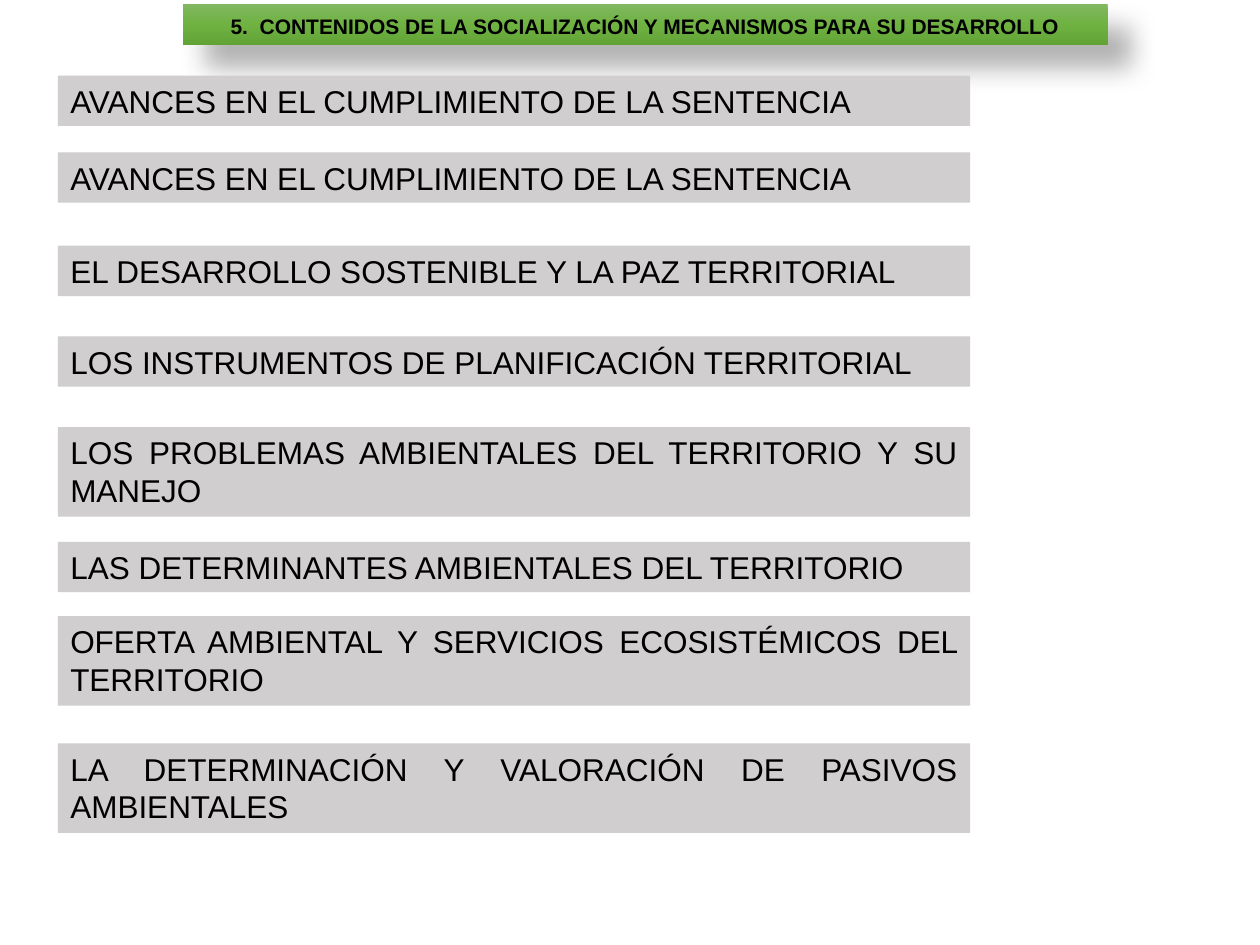
from copy import deepcopy

from lxml.etree import SubElement
from pptx import Presentation
from pptx.dml.color import RGBColor
from pptx.enum.text import MSO_ANCHOR, MSO_AUTO_SIZE as AutoSize, PP_ALIGN as Align
from pptx.oxml.ns import qn
from pptx.util import Inches, Pt

BLACK = RGBColor(0x00, 0x00, 0x00)
GREY = RGBColor(0xD0, 0xCE, 0xCE)
GREENS = [(0, RGBColor(0x81, 0xB8, 0x61)), (0.5, RGBColor(0x6F, 0xB2, 0x42)),
          (1, RGBColor(0x62, 0xA3, 0x36))]

TITLE = "5.  CONTENIDOS DE LA SOCIALIZACIÓN Y MECANISMOS PARA SU DESARROLLO"
LEFT, WIDTH = 0.46, 7.24
ONE_LINE, TWO_LINES = 0.4, 0.71
TOPICS = [
    (0.6, ONE_LINE, "AVANCES EN EL CUMPLIMIENTO DE LA SENTENCIA"),
    (1.21, ONE_LINE, "AVANCES EN EL CUMPLIMIENTO DE LA SENTENCIA"),
    (1.95, ONE_LINE, "EL DESARROLLO SOSTENIBLE Y LA PAZ TERRITORIAL"),
    (2.67, ONE_LINE, "LOS INSTRUMENTOS DE PLANIFICACIÓN TERRITORIAL"),
    (3.39, TWO_LINES, "LOS PROBLEMAS AMBIENTALES DEL TERRITORIO Y SU MANEJO"),
    (4.3, ONE_LINE, "LAS DETERMINANTES AMBIENTALES DEL TERRITORIO"),
    (4.89, TWO_LINES, "OFERTA AMBIENTAL Y SERVICIOS ECOSISTÉMICOS DEL TERRITORIO"),
    (5.9, TWO_LINES, "LA DETERMINACIÓN Y VALORACIÓN DE PASIVOS AMBIENTALES"),
]


def write(sp, text, size, align, auto_size, bold=False):
    tf = sp.text_frame
    tf.word_wrap = True
    tf.auto_size = auto_size
    tf.vertical_anchor = MSO_ANCHOR.TOP
    p = tf.paragraphs[0]
    p.text = text
    p.alignment = align
    p.font.name, p.font.size, p.font.bold = "Arial", Pt(size), bold
    p.font.color.rgb = BLACK
    return p


def fill_gradient(sp, stops):
    sp.fill.gradient()
    sp.fill.gradient_angle = 270
    stop_list = sp._element.spPr.find(qn("a:gradFill")).find(qn("a:gsLst"))
    stop_list.append(deepcopy(stop_list[-1]))
    for stop, (position, color) in zip(sp.fill.gradient_stops, stops):
        stop.position = position
        stop.color.rgb = color


def add_shadow(sp, blur, distance, angle, opacity):
    effects = SubElement(sp._element.spPr, qn("a:effectLst"))
    shadow = SubElement(effects, qn("a:outerShdw"), blurRad=str(Pt(blur)),
                        dist=str(Pt(distance)), dir=str(angle * 60000),
                        algn="tl", rotWithShape="0")
    color = SubElement(shadow, qn("a:srgbClr"), val=str(BLACK))
    SubElement(color, qn("a:alpha"), val=str(opacity * 1000))


def add_title(s):
    sp = s.shapes.title
    sp.left, sp.top, sp.width, sp.height = map(Inches, (1.45, 0.03, 7.34, 0.33))
    fill_gradient(sp, GREENS)
    add_shadow(sp, blur=15, distance=18, angle=45, opacity=30)
    p = write(sp, TITLE, 12, Align.CENTER, AutoSize.NONE, bold=True)
    p.line_spacing = 1.15
    p.space_before = Pt(0)


def add_topic(s, top, height, text):
    sp = s.shapes.add_textbox(*map(Inches, (LEFT, top, WIDTH, height)))
    sp.fill.solid()
    sp.fill.fore_color.rgb = GREY
    write(sp, text, 18, Align.JUSTIFY, AutoSize.SHAPE_TO_FIT_TEXT)


def main():
    """Build the slide of contents and save it."""
    prs = Presentation()
    prs.slide_width, prs.slide_height = Inches(10), Inches(7.5)
    s = prs.slides.add_slide(prs.slide_layouts[5])
    add_title(s)
    for topic in TOPICS:
        add_topic(s, *topic)
    prs.save("out.pptx")


if __name__ == "__main__":
    main()
